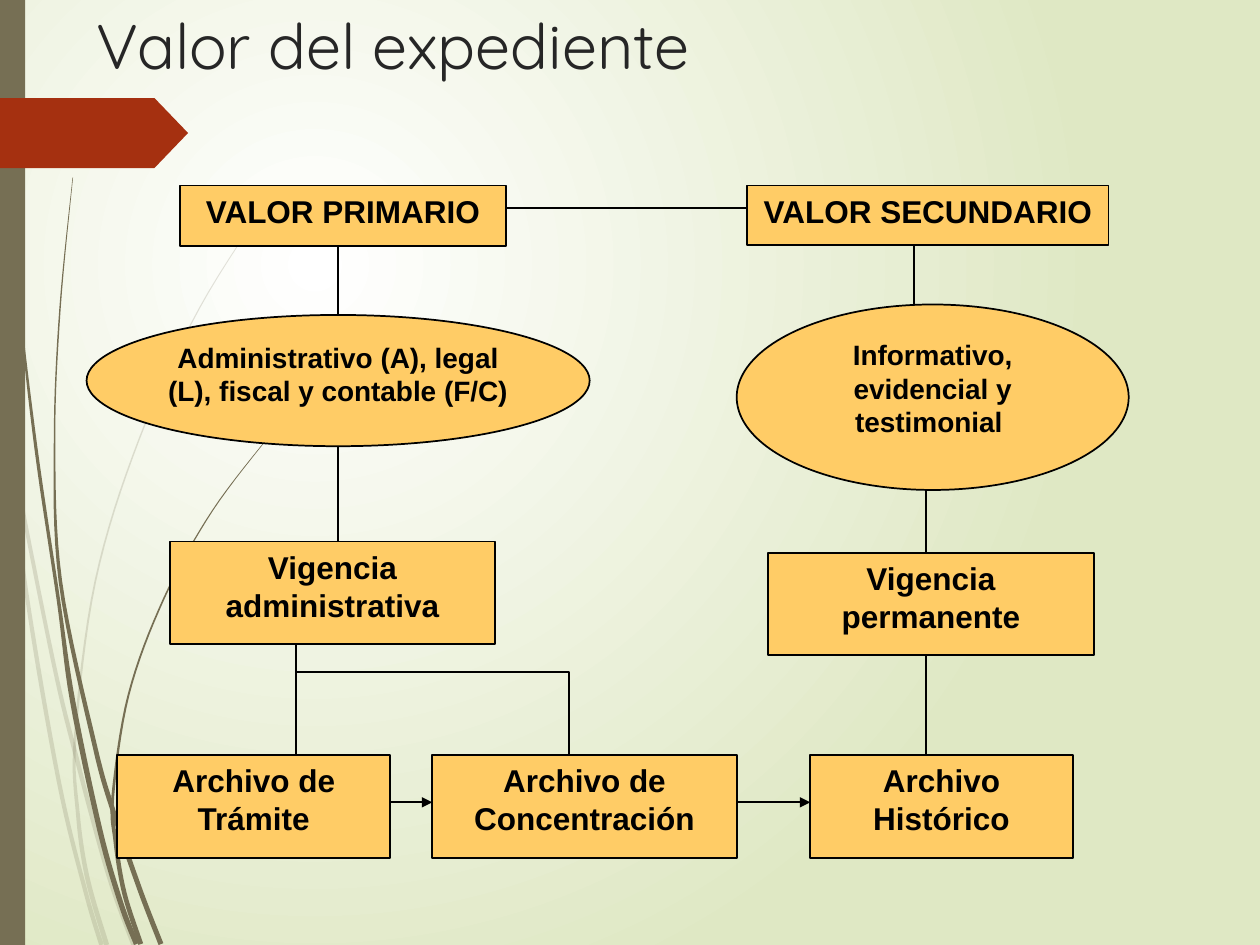
from lxml import etree
from pptx import Presentation
from pptx.dml.color import RGBColor
from pptx.enum.shapes import MSO_CONNECTOR, MSO_SHAPE
from pptx.enum.text import MSO_ANCHOR, PP_ALIGN
from pptx.oxml.ns import qn
from pptx.util import Pt

RECT, OVAL, PENTAGON = MSO_SHAPE.RECTANGLE, MSO_SHAPE.OVAL, MSO_SHAPE.PENTAGON
STRAIGHT = MSO_CONNECTOR.STRAIGHT
TOP, LEFT, CENTER = MSO_ANCHOR.TOP, PP_ALIGN.LEFT, PP_ALIGN.CENTER

W, H = 720, 540
OLIVE, RED, AMBER, BLACK = "766F54", "A53010", "FFCC66", "000000"
TITLE = "Valor del expediente"

# name: (shape, text, size, left, top, width, height)
BOXES = {
    "primario": (RECT, "VALOR PRIMARIO", 18, 103, 106, 186, 34.5),
    "secundario": (RECT, "VALOR SECUNDARIO", 18, 427, 106, 206.5, 34),
    "legal": (OVAL, "Administrativo (A), legal (L), fiscal y contable (F/C)", 16,
              49.5, 180, 287.5, 75),
    "administrativa": (RECT, "Vigencia administrativa", 18, 97, 309.5, 186, 58.5),
    "permanente": (RECT, "Vigencia permanente", 18, 439, 316, 186, 58.5),
    "tramite": (RECT, "Archivo de Trámite", 18, 67, 431.5, 156, 59),
    "concentracion": (RECT, "Archivo de Concentración", 18, 247, 431.5, 174, 59),
    "historico": (RECT, "Archivo Histórico", 18, 463, 431.5, 150, 59),
    "testimonial": (OVAL, "Informativo, evidencial y testimonial ", 16, 421, 174, 224, 106),
}
# (upper box, lower box, x)
DROPS = [
    ("primario", "legal", 193), ("secundario", "testimonial", 522.5),
    ("legal", "administrativa", 193), ("testimonial", "permanente", 529),
    ("administrativa", "tramite", 169), ("permanente", "historico", 529),
]
# (left box, right box, y, arrow)
LINKS = [
    ("primario", "secundario", 119, False),
    ("tramite", "concentracion", 458.5, True),
    ("concentracion", "historico", 458.5, True),
]
BRANCH = [(169, 384), (325, 384), (325, 431.5)]

# Grass blades: opacity in percent, then knots (x, y, thickness)
BLADES = [
    (20, [(0, 209, 1), (7, 259, 2), (30, 376, 2.3), (44, 434, 2.5), (62, 500, 2.5), (76.5, 540, 2.8)]),
    (20, [(5.5, 252, 0.3), (15, 338, 2.2), (33.5, 446, 2.4), (49, 510, 2.4), (58, 540, 2.6)]),
    (20, [(156, 110, 0.3), (114, 176, 0.6), (79.5, 251, 0.8), (54.5, 332, 1), (43, 420.5, 1.5),
          (44.5, 465, 2.2), (50, 502, 2.6), (61, 540, 2.8)]),
    (100, [(1.8, 0, 0.6), (4, 79, 0.8), (10.5, 167.5, 1), (20.5, 255.5, 1.8), (33.5, 343.5, 2),
           (41.5, 400.5, 3), (57, 474, 3), (69, 516, 3), (78, 539.5, 3)]),
    (100, [(41.6, 101.5, 0.3), (34.3, 176.5, 0.8), (31.2, 251, 0.9), (34.5, 332, 2),
           (54, 425.5, 2.6), (65.5, 466, 2.8), (80, 508.5, 2.8), (92, 539.5, 2.9)]),
    (100, [(155, 247.7, 0.3), (121.3, 292, 0.6), (93.7, 342, 0.9), (73.5, 397, 1.1),
           (64.5, 455, 1.6), (66, 480, 2.4), (71, 510, 2.6), (80.5, 539.5, 2.8)]),
]


def color(hex_string):
    return RGBColor.from_string(hex_string)


def style(shape, fill=None, line=None):
    shape.shadow.inherit = False
    if fill:
        shape.fill.solid()
        shape.fill.fore_color.rgb = color(fill)
    else:
        shape.fill.background()
    if line:
        shape.line.color.rgb = color(line)
        shape.line.width = Pt(1)
    else:
        shape.line.fill.background()
    return shape


def write(shape, text, size, font, ink, bold, align, inset=7.2):
    tf = shape.text_frame
    tf.word_wrap = True
    tf.vertical_anchor = TOP
    tf.margin_left = tf.margin_right = Pt(inset)
    tf.margin_top = tf.margin_bottom = Pt(3.6)
    p = tf.paragraphs[0]
    p.alignment = align
    r = p.add_run()
    r.text = text
    r.font.name, r.font.size, r.font.bold = font, Pt(size), bold
    r.font.color.rgb = color(ink)


def outline(points, close):
    pts = [(Pt(x), Pt(y)) for x, y in points]
    fb = s.shapes.build_freeform(*pts[0])
    fb.add_line_segments(pts[1:], close=close)
    return fb.convert_to_shape()


def smooth(knots, steps=8):
    """Catmull-Rom curve through the knots."""
    ends = [knots[0], *knots, knots[-1]]
    curve = []
    for a, b, c, d in zip(ends, ends[1:], ends[2:], ends[3:]):
        for i in range(steps):
            t = i / steps
            curve.append([(2 * q + (v - o) * t + (2 * o - 5 * q + 4 * v - w) * t ** 2
                           + (3 * q - o - 3 * v + w) * t ** 3) / 2
                          for o, q, v, w in zip(a, b, c, d)])
    return curve + [knots[-1]]


def blade(opacity, knots):
    curve = smooth(knots)
    right, left = [], []
    for i, (x, y, thick) in enumerate(curve):
        x0, y0, _ = curve[max(i - 1, 0)]
        x1, y1, _ = curve[min(i + 1, len(curve) - 1)]
        length = ((x1 - x0) ** 2 + (y1 - y0) ** 2) ** 0.5
        dx, dy = (y1 - y0) / length * thick / 2, (x0 - x1) / length * thick / 2
        right.append((x + dx, y + dy))
        left.append((x - dx, y - dy))
    sp = style(outline(right + left[::-1], True), OLIVE)
    if opacity < 100:
        rgb = sp._element.spPr.find(qn("a:solidFill")).find(qn("a:srgbClr"))
        etree.SubElement(rgb, qn("a:alpha"), val=str(opacity * 1000))


def connect(x0, y0, x1, y1, arrow=False):
    cx = s.shapes.add_connector(STRAIGHT, Pt(x0), Pt(y0), Pt(x1), Pt(y1))
    cx.line.color.rgb = color(BLACK)
    cx.line.width = Pt(1)
    if arrow:
        etree.SubElement(cx.line._get_or_add_ln(), qn("a:tailEnd"), type="triangle")
    etree.SubElement(cx._element.spPr, qn("a:effectLst"))


prs = Presentation()
prs.slide_width, prs.slide_height = Pt(W), Pt(H)
s = prs.slides.add_slide(prs.slide_layouts[6])

# Radial background
bg = s.background.fill
bg.gradient()
for stop, hex_string in zip(bg.gradient_stops, ("FFFFFF", "DFE8C4")):
    stop.color.rgb = color(hex_string)
grad = s._element.find(".//" + qn("a:gradFill"))
grad.remove(grad.find(qn("a:lin")))
circle = etree.SubElement(grad, qn("a:path"), path="circle")
etree.SubElement(circle, qn("a:fillToRect"), l="25000", t="28000", r="75000", b="72000")

# Grass, side bar and red tab
for opacity, knots in BLADES:
    blade(opacity, knots)
style(s.shapes.add_shape(RECT, 0, 0, Pt(14.4), Pt(H)), OLIVE)
tab = style(s.shapes.add_shape(PENTAGON, 0, Pt(56), Pt(107.5), Pt(40)), RED)
tab.adjustments[0] = 0.48

# Title
title = s.shapes.add_textbox(Pt(48), 0, Pt(648), Pt(90))
write(title, TITLE, 36, "Quicksand", "262626", False, LEFT)

# Boxes
for kind, text, size, x, y, w, h in BOXES.values():
    sp = style(s.shapes.add_shape(kind, Pt(x), Pt(y), Pt(w), Pt(h)), AMBER, BLACK)
    write(sp, text, size, "Arial", BLACK, True, CENTER, 1.4 if kind == OVAL else 7.2)

# Lines between box edges
for upper, lower, x in DROPS:
    _, _, _, _, top, _, height = BOXES[upper]
    connect(x, top + height, x, BOXES[lower][4])
for first, second, y, arrow in LINKS:
    _, _, _, left, _, width, _ = BOXES[first]
    connect(left + width, y, BOXES[second][3], y, arrow)
style(outline(BRANCH, False), line=BLACK)

prs.save("out.pptx")
